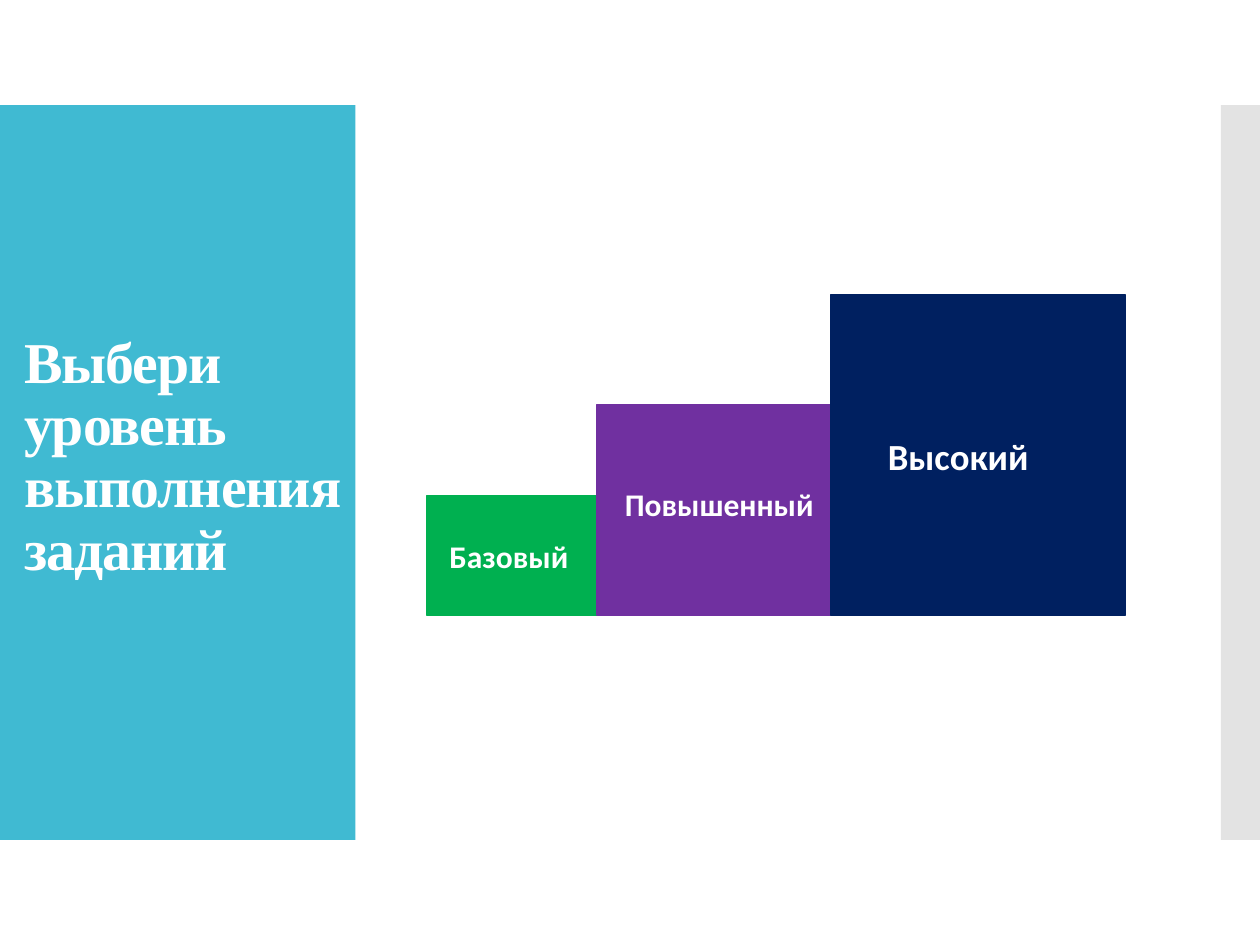
"""Build a slide with three rising steps for choosing a task level."""
from dataclasses import dataclass
from itertools import accumulate

from lxml import etree
from pptx import Presentation
from pptx import util as u
from pptx.dml.color import RGBColor
from pptx.enum import shapes, text
from pptx.oxml.ns import qn


@dataclass(frozen=True)
class Theme:
    panel: str = "40BAD2"
    strip: str = "C8C8C8"
    low: str = "00B050"
    middle: str = "7030A0"
    high: str = "002060"
    ink: str = "FFFFFF"
    title_font: str = "Times New Roman"
    body_font: str = "Calibri"
    title_size: float = 33
    label_size: float = 18
    large_size: float = 21


@dataclass(frozen=True)
class Frame:
    left: float
    top: float
    width: float
    height: float

    def lengths(self) -> tuple:
        return tuple(map(u.Pt, (self.left, self.top, self.width, self.height)))


@dataclass(frozen=True)
class Step:
    name: str
    color: str
    width: float
    height: float
    size: float
    label: Frame


THEME = Theme()
STEPS_LEFT, STEPS_BOTTOM = 244, 351.6
STEPS = (
    Step("Базовый", THEME.low, 97.2, 68.4, THEME.label_size,
         Frame(249.8, 303.1, 91.4, 29.1)),
    Step("Повышенный", THEME.middle, 133.4, 120.4, THEME.label_size,
         Frame(350, 273.6, 124.6, 29.1)),
    Step("Высокий", THEME.high, 168.5, 183, THEME.large_size,
         Frame(500.2, 244.2, 118, 32.7)),
)


def add_block(page, frame: Frame, color: str, outlined: bool = False):
    block = page.shapes.add_shape(shapes.MSO_SHAPE.RECTANGLE, *frame.lengths())
    block.shadow.inherit = False
    block.fill.solid()
    block.fill.fore_color.rgb = RGBColor.from_string(color)
    if outlined:
        block.line.color.rgb = RGBColor.from_string(color)
        block.line.width = u.Pt(0.85)
    else:
        block.line.fill.background()
    return block


def write(box, words: str, *, font: str, size: float, spacing: float = 0,
          line_spacing: float = 1, anchor=text.MSO_ANCHOR.TOP) -> None:
    frame = box.text_frame
    frame.word_wrap = True
    frame.auto_size = text.MSO_AUTO_SIZE.NONE
    frame.vertical_anchor = anchor
    para = frame.paragraphs[0]
    para.alignment = text.PP_ALIGN.LEFT
    para.line_spacing = line_spacing
    span = para.add_run()
    span.text = words
    span.font.name = font
    span.font.size = u.Pt(size)
    span.font.bold = True
    span.font.color.rgb = RGBColor.from_string(THEME.ink)
    if spacing:
        span.font._element.set("spc", str(round(spacing * 100)))


def add_panels(page) -> None:
    add_block(page, Frame(0, 60, 203.2, 420), THEME.panel)
    strip = add_block(page, Frame(697.6, 60, 22.4, 420), THEME.strip)
    color = strip.fill._xPr.find(qn("a:solidFill"))[0]
    etree.SubElement(color, qn("a:alpha"), val="50000")


def place_title(page) -> None:
    title = page.shapes.title
    title.left, title.top, title.width, title.height = Frame(
        6.6, 117.4, 198.6, 288.7).lengths()
    write(title, "Выбери уровень выполнения заданий", font=THEME.title_font,
          size=THEME.title_size, spacing=-0.6, line_spacing=0.9,
          anchor=text.MSO_ANCHOR.MIDDLE)
    title.element.getparent().append(title.element)


def add_steps(page) -> None:
    lefts = accumulate((step.width for step in STEPS), initial=STEPS_LEFT)
    for step, left in zip(STEPS, lefts):
        frame = Frame(left, STEPS_BOTTOM - step.height, step.width, step.height)
        add_block(page, frame, step.color, outlined=True)
    for step in STEPS:
        box = page.shapes.add_textbox(*step.label.lengths())
        write(box, step.name, font=THEME.body_font, size=step.size)


def main() -> None:
    deck = Presentation()
    deck.slide_width, deck.slide_height = u.Pt(720), u.Pt(540)
    page = deck.slides.add_slide(deck.slide_layouts.get_by_name("Title Only"))
    add_panels(page)
    place_title(page)
    add_steps(page)
    deck.save("out.pptx")


if __name__ == "__main__":
    main()
